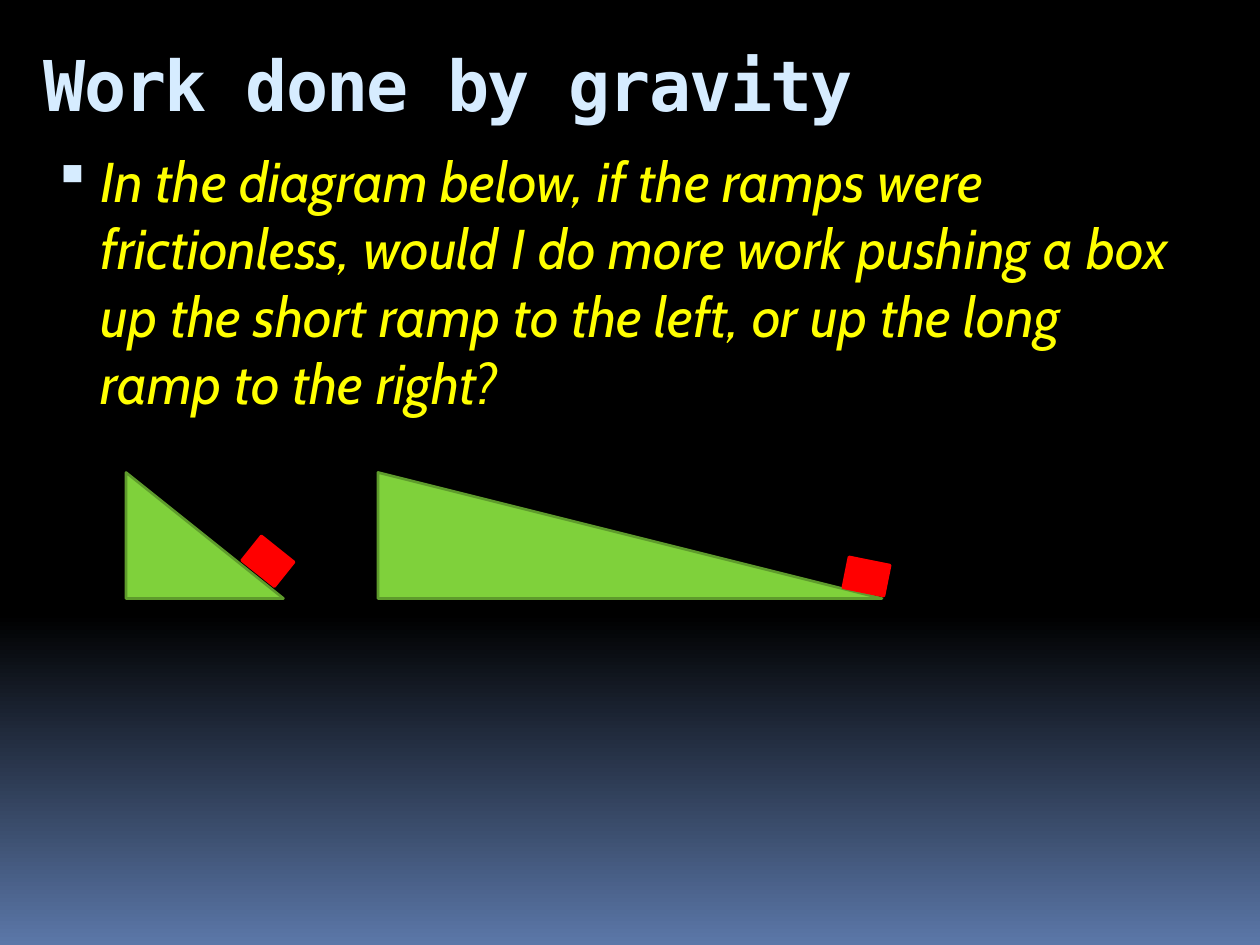
from lxml import etree
from pptx import Presentation
from pptx.dml.color import RGBColor
from pptx.enum import shapes, text
from pptx.oxml import ns
from pptx.util import Pt

COLORS = {
    "black": "000000",
    "dusk": "5B77A8",
    "title": "D6ECFF",
    "question": "FFFF00",
    "ramp": "7FD13B",
    "ramp_edge": "5E9B2C",
    "crate": "FF0000",
}
TITLE_FORMAT = {"name": "DejaVu Sans Mono", "size": Pt(40), "bold": True}
QUESTION_FORMAT = {"name": "Cabin", "size": Pt(32), "italic": True}
FRAME_FORMAT = {
    "word_wrap": True,
    "vertical_anchor": text.MSO_ANCHOR.TOP,
    "margin_top": Pt(6),
}


def color(name):
    """Return the named colour."""
    return RGBColor.from_string(COLORS[name])


def apply_format(target, values):
    """Set each attribute in values on the target."""
    for name, value in values.items():
        setattr(target, name, value)


def add_background(slide):
    """Fill the slide with black that fades to blue at the bottom."""
    fill = slide.background.fill
    fill.gradient()
    fill.gradient_angle = 270
    stops = (("black", 0.65), ("dusk", 1))
    for stop, (name, position) in zip(fill.gradient_stops, stops):
        stop.color.rgb = color(name)
        stop.position = position


def add_text(slide, box, words, color_name, values):
    """Place one paragraph in a text box and return the paragraph."""
    frame = slide.shapes.add_textbox(*map(Pt, box)).text_frame
    apply_format(frame, FRAME_FORMAT)
    paragraph = frame.paragraphs[0]
    run = paragraph.add_run()
    run.text = words
    apply_format(run.font, values)
    run.font.color.rgb = color(color_name)
    return paragraph


def add_title(slide, box):
    """Place the slightly tightened title."""
    paragraph = add_text(slide, box, "Work done by gravity", "title", TITLE_FORMAT)
    paragraph.runs[0].font._element.set("spc", "-100")


def add_question(slide, box):
    """Place the bulleted question."""
    words = (
        "In the diagram below, if the ramps were frictionless, would I do more "
        "work pushing a box up the short ramp to the left, or up the long ramp "
        "to the right?"
    )
    paragraph = add_text(slide, box, words, "question", QUESTION_FORMAT)
    properties = paragraph._p.get_or_add_pPr()
    properties.set("marL", str(Pt(32.4)))
    properties.set("indent", str(-Pt(27.4)))
    bullet_color = etree.SubElement(properties, ns.qn("a:buClr"))
    etree.SubElement(bullet_color, ns.qn("a:srgbClr"), val=COLORS["title"])
    etree.SubElement(properties, ns.qn("a:buSzPct"), val="95000")
    etree.SubElement(properties, ns.qn("a:buChar"), char="▪")


def add_solid(group, kind, box, fill_name, line_name, rotation=0):
    """Add one filled and outlined shape to the group."""
    shape = group.shapes.add_shape(kind, *map(Pt, box))
    shape.shadow.inherit = False
    shape.rotation = rotation
    shape.fill.solid()
    shape.fill.fore_color.rgb = color(fill_name)
    shape.line.color.rgb = color(line_name)
    shape.line.width = Pt(1.5)


def add_ramps(slide, box):
    """Draw the short and long ramps, each with a crate near its foot."""
    left, top, width, height = box
    group = slide.shapes.add_group_shape()
    ramps = ((0, 90), (144, width - 144))
    crates = ((69.12, 41.76, 38.6), (411.12, 50.4, 11.4))
    for x, length in ramps:
        place = (left + x, top, length, height)
        add_solid(group, shapes.MSO_SHAPE.RIGHT_TRIANGLE, place, "ramp", "ramp_edge")
    for x, y, rotation in crates:
        place = (left + x, top + y, 24, 18)
        add_solid(group, shapes.MSO_SHAPE.RECTANGLE, place, "crate", "crate", rotation)


def main():
    """Build and save the slide."""
    presentation = Presentation()
    apply_format(presentation, {"slide_width": Pt(720), "slide_height": Pt(540)})
    slide = presentation.slides.add_slide(presentation.slide_layouts[6])
    add_background(slide)
    add_title(slide, (18, 18, 666, 58))
    add_question(slide, (18, 77.76, 666, 170))
    add_ramps(slide, (72, 270, 432, 72))
    presentation.save("out.pptx")


if __name__ == "__main__":
    main()
